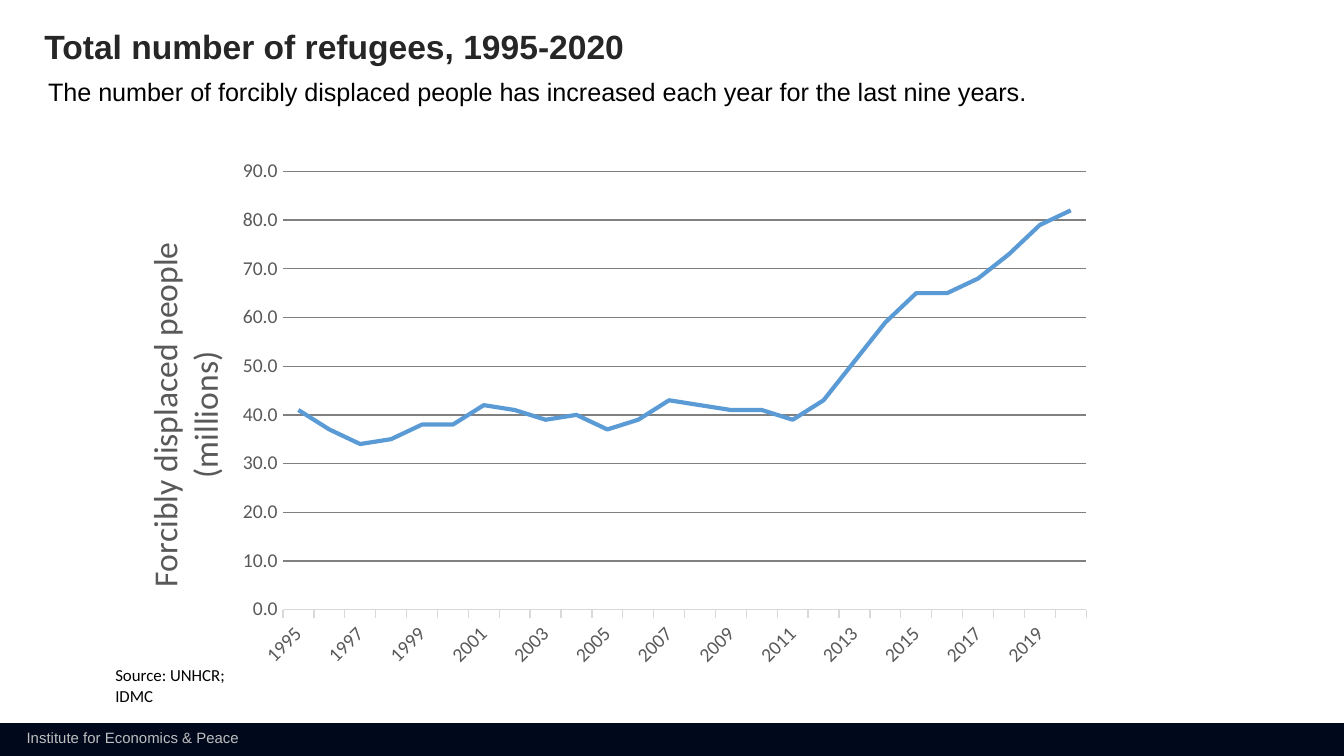
from lxml import etree
from pptx import Presentation
from pptx.chart.data import CategoryChartData
from pptx.dml.color import RGBColor
from pptx.enum.chart import XL_CHART_TYPE, XL_TICK_MARK
from pptx.enum.shapes import MSO_SHAPE
from pptx.enum.text import MSO_ANCHOR, MSO_AUTO_SIZE, PP_ALIGN
from pptx.oxml import parse_xml
from pptx.oxml.ns import nsdecls, qn
from pptx.util import Inches, Pt

LINE_CHART = XL_CHART_TYPE.LINE
TICK_NONE, TICK_OUTSIDE = XL_TICK_MARK.NONE, XL_TICK_MARK.OUTSIDE
RECTANGLE = MSO_SHAPE.RECTANGLE
TOP, LEFT, NO_AUTOFIT = MSO_ANCHOR.TOP, PP_ALIGN.LEFT, MSO_AUTO_SIZE.NONE

NAVY = RGBColor(0x00, 0x08, 0x1C)
BLACK = RGBColor(0x00, 0x00, 0x00)
CHARCOAL = RGBColor(0x26, 0x26, 0x26)
AXIS_GRAY = RGBColor(0x59, 0x59, 0x59)
GRID_GRAY = RGBColor(0x80, 0x80, 0x80)
FOOTER_GRAY = RGBColor(0xBF, 0xBF, 0xBF)
PALE_GRAY = RGBColor(0xD9, 0xD9, 0xD9)
BLUE = RGBColor(0x5B, 0x9B, 0xD5)

YEARS = [str(year) for year in range(1995, 2021)]
DISPLACED_MILLIONS = [41, 37, 34, 35, 38, 38, 42, 41, 39, 40, 37, 39, 43,
                      42, 41, 41, 39, 43, 51, 59, 65, 65, 68, 73, 79, 82]


def format_font(font, size, color, name="Arial", bold=False):
    font.size = Pt(size)
    font.name = name
    font.bold = bold
    font.color.rgb = color


def write_text(text_frame, text, line_spacing=None, **font_format):
    text_frame.text = text
    paragraph = text_frame.paragraphs[0]
    paragraph.alignment = LEFT
    if line_spacing:
        paragraph.line_spacing = line_spacing
    format_font(paragraph.runs[0].font, **font_format)


def manual_layout(x, y, width=None, height=None):
    """Return a c:layout element; positions are fractions of the chart."""
    values = [("xMode", "edge"), ("yMode", "edge"), ("x", x), ("y", y)]
    if width:
        values.insert(0, ("layoutTarget", "inner"))
        values += [("w", width), ("h", height)]
    layout = parse_xml(f"<c:layout {nsdecls('c')}><c:manualLayout/></c:layout>")
    for tag, value in values:
        etree.SubElement(layout[0], qn(f"c:{tag}")).set("val", str(value))
    return layout


def replace_layout(parent, layout, predecessor=None):
    for old_layout in parent.findall(qn("c:layout")):
        parent.remove(old_layout)
    if predecessor is None:
        parent.insert(0, layout)
    else:
        predecessor.addnext(layout)


class SlideBuilder:
    def __init__(self, presentation):
        self.chart_font = "Calibri"
        self.slide = presentation.slides.add_slide(presentation.slide_layouts[5])

    def title(self, text, left, top, width, height):
        shape = self.slide.shapes.title
        shape.left, shape.top = Inches(left), Inches(top)
        shape.width, shape.height = Inches(width), Inches(height)
        frame = shape.text_frame
        frame.auto_size = NO_AUTOFIT
        frame.vertical_anchor = TOP
        frame.margin_left = frame.margin_right = 0
        frame.margin_top = frame.margin_bottom = 0
        write_text(frame, text, line_spacing=0.9, size=18, color=CHARCOAL, bold=True)

    def text(self, text, left, top, width, height, wrap=False, **font_format):
        box = self.slide.shapes.add_textbox(
            Inches(left), Inches(top), Inches(width), Inches(height))
        box.text_frame.word_wrap = wrap
        write_text(box.text_frame, text, **font_format)

    def bar(self, left, top, width, height, color):
        shape = self.slide.shapes.add_shape(
            RECTANGLE, Inches(left), Inches(top), Inches(width), Inches(height))
        shape.shadow.inherit = False
        shape.fill.solid()
        shape.fill.fore_color.rgb = color
        shape.line.fill.background()

    def line_chart(self, categories, values, axis_title, left, top, width, height):
        data = CategoryChartData(number_format="0.0")
        data.categories = categories
        data.add_series("Series 1", values)
        chart = self.slide.shapes.add_chart(
            LINE_CHART, Inches(left), Inches(top), Inches(width), Inches(height),
            data).chart
        chart.has_legend = False
        chart.has_title = False
        format_font(chart.font, 10, BLACK, self.chart_font)
        plot = chart.plots[0]
        plot.vary_by_categories = False
        series = plot.series[0]
        series.smooth = False
        series.format.line.color.rgb = BLUE
        series.format.line.width = Pt(2.25)
        plot_area = chart.element.find(f".//{qn('c:plotArea')}")
        replace_layout(plot_area, manual_layout(0.177, 0.027, 0.798, 0.832))
        self.category_axis(chart.category_axis)
        self.value_axis(chart.value_axis, axis_title)

    def category_axis(self, axis):
        axis.major_tick_mark = TICK_OUTSIDE
        axis.minor_tick_mark = TICK_NONE
        axis.format.line.color.rgb = PALE_GRAY
        axis.format.line.width = Pt(0.75)
        format_font(axis.tick_labels.font, 10.5, AXIS_GRAY, self.chart_font)
        element = axis._element
        element.find(f"{qn('c:txPr')}/{qn('a:bodyPr')}").set("rot", "-2700000")
        label_skip = parse_xml(f'<c:tickLblSkip {nsdecls("c")} val="2"/>')
        element.find(qn("c:noMultiLvlLbl")).addprevious(label_skip)

    def value_axis(self, axis, title):
        axis.minimum_scale, axis.maximum_scale, axis.major_unit = 0, 90, 10
        axis.major_tick_mark = axis.minor_tick_mark = TICK_NONE
        axis.format.line.fill.background()
        axis.major_gridlines.format.line.color.rgb = GRID_GRAY
        axis.major_gridlines.format.line.width = Pt(0.75)
        axis.tick_labels.number_format = "0.0"
        axis.tick_labels.number_format_is_linked = False
        format_font(axis.tick_labels.font, 10.5, AXIS_GRAY, self.chart_font)
        frame = axis.axis_title.text_frame
        frame.text = title
        format_font(frame.paragraphs[0].runs[0].font, 18, AXIS_GRAY, self.chart_font)
        body = frame._txBody.find(qn("a:bodyPr"))
        body.set("rot", "-5400000")
        body.set("vert", "horz")
        title_element = axis.axis_title._element
        replace_layout(title_element, manual_layout(0.03, 0.15),
                       title_element.find(qn("c:tx")))


def main():
    presentation = Presentation()
    presentation.slide_width = Inches(10)
    presentation.slide_height = Inches(10 * 9 / 16)
    builder = SlideBuilder(presentation)
    builder.bar(0, 5.38, 10, 0.25, NAVY)
    builder.text("Institute for Economics & Peace", 0.1, 5.37, 1.8, 0.24,
                 size=8, color=FOOTER_GRAY)
    builder.title("Total number of refugees, 1995-2020", 0.33, 0.23, 8.36, 0.3)
    builder.text("The number of forcibly displaced people has increased each year "
                 "for the last nine years.", 0.26, 0.52, 7.59, 0.33,
                 size=13.5, color=BLACK)
    builder.line_chart(YEARS, DISPLACED_MILLIONS,
                       "Forcibly displaced people (millions)", 0.78, 1.17, 7.49, 3.92)
    builder.text("Source: UNHCR; IDMC", 0.76, 4.9, 1.06, 0.17, wrap=True,
                 size=9, color=BLACK, name="Calibri")
    presentation.save("out.pptx")


if __name__ == "__main__":
    main()
